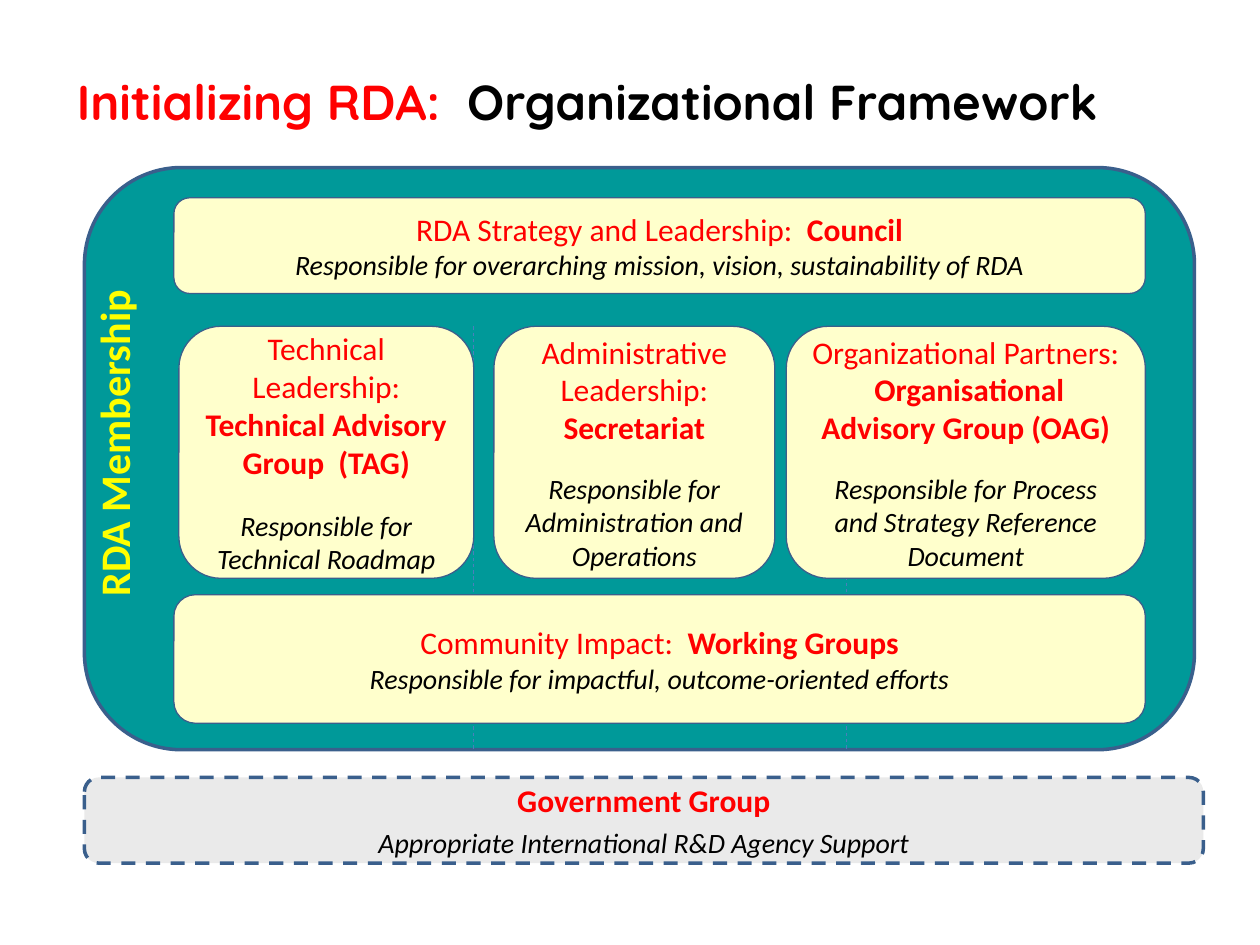
from collections import namedtuple

from lxml import etree
from pptx import Presentation, util as u
from pptx.dml.color import RGBColor
from pptx.enum import dml, shapes, text
from pptx.oxml.ns import qn

# Slide grid: 100 columns by 75 rows of square cells
COLUMNS, ROWS = 100, 75
CELL = u.Inches(0.1)
Box = namedtuple("Box", "left top width height")

RED = RGBColor(0xFF, 0x00, 0x00)
BLACK = RGBColor(0x00, 0x00, 0x00)
YELLOW = RGBColor(0xFF, 0xFF, 0x00)
CREAM = RGBColor(0xFF, 0xFF, 0xCC)
TEAL = RGBColor(0x00, 0x99, 0x99)
GREY = RGBColor(0xEA, 0xEA, 0xEA)
NAVY = RGBColor(0x3A, 0x5F, 0x8C)
BLUE = RGBColor(0x4B, 0x7E, 0xBC)


def cells(*counts):
    return [round(count * CELL) for count in counts]


def inside(box, left, top, width, height):
    """Box whose offsets are counted in cells from the corner of another."""
    return Box(box.left + left, box.top + top, width, height)


def format_run(run, size, color, bold=False, italic=False, font="Calibri"):
    run.font.name, run.font.size = font, u.Pt(size)
    run.font.bold, run.font.italic = bold, italic
    run.font.color.rgb = color


def add_panel(slide, box, fill, line_width):
    panel = slide.shapes.add_shape(
        shapes.MSO_SHAPE.ROUNDED_RECTANGLE, *cells(*box))
    panel.shadow.inherit = False
    panel.fill.solid()
    panel.fill.fore_color.rgb = fill
    panel.line.color.rgb = NAVY
    panel.line.width = u.Pt(line_width)
    return panel


def add_card(slide, box, role, body, duty, gap=0, fill=CREAM, line_width=0.75):
    """Rounded card: red role, bold body name, and duty in italics.

    A role ending in a space or line break shares a paragraph with the name.
    """
    card = add_panel(slide, box, fill, line_width)
    frame = card.text_frame
    frame.word_wrap = True
    frame.vertical_anchor = text.MSO_ANCHOR.MIDDLE
    separate = role and role[-1] not in " \v"
    frame.text = "\n".join([role, body, duty] if separate
                           else [role + body, duty])
    for paragraph in frame.paragraphs:
        paragraph.alignment = text.PP_ALIGN.CENTER
    *headings, last = frame.paragraphs
    if separate:
        format_run(headings[0].runs[0], 18, RED)
        format_run(headings[1].runs[0], 18, RED, bold=True)
    else:
        heading = headings[0]
        heading.text = role
        for run in heading.runs:
            format_run(run, 18, RED)
        name = heading.add_run()
        name.text = body
        format_run(name, 18, RED, bold=True)
    last.space_before = u.Pt(gap)
    format_run(last.runs[0], 16, BLACK, italic=True)
    return card


def add_divider(slide, column, top, bottom):
    divider = slide.shapes.add_connector(
        shapes.MSO_CONNECTOR.STRAIGHT, *cells(column, top, column, bottom))
    divider.line.color.rgb = BLUE
    divider.line.width = u.Pt(0.5)
    divider.line.dash_style = dml.MSO_LINE.DASH
    etree.SubElement(divider._element.spPr, qn("a:effectLst"))


def add_title(slide, box):
    title = slide.shapes.title
    title.left, title.top, title.width, title.height = cells(*box)
    frame = title.text_frame
    frame.vertical_anchor = text.MSO_ANCHOR.MIDDLE
    paragraph = frame.paragraphs[0]
    paragraph.alignment = text.PP_ALIGN.LEFT
    for words, color in (("Initializing RDA:  ", RED),
                         ("Organizational Framework", BLACK)):
        run = paragraph.add_run()
        run.text = words
        format_run(run, 28, color, bold=True, font="Quicksand")


def add_side_label(slide, box):
    """Label that reads upwards along the left edge of the box."""
    width, height = 26.6, 5
    center_x, center_y = box.left + 2.3, box.top + 21.7
    label = slide.shapes.add_textbox(*cells(
        center_x - width / 2, center_y - height / 2, width, height))
    label.rotation = 270
    label.text_frame.word_wrap = False
    label.text_frame.text = "RDA Membership"
    format_run(label.text_frame.paragraphs[0].runs[0], 24, YELLOW, bold=True)


def add_membership(slide, box):
    add_panel(slide, box, TEAL, 2)
    middle_top, middle_height = 12.6, 20
    for column in (37.6, 67.2):
        add_divider(slide, column, box.top + middle_top, box.top + box.height)

    # Full-width cards above and below the leadership row
    add_card(slide, inside(box, 7.1, 2.4, 77.1, 7.6),
             "RDA Strategy and Leadership:  ", "Council",
             "Responsible for overarching mission, vision, "
             "sustainability of RDA")
    add_card(slide, inside(box, 7.1, 33.9, 77.1, 10.2),
             "Community Impact:  ", "Working Groups",
             "Responsible for impactful, outcome-oriented efforts")

    # Leadership row
    leadership = (
        (7.5, 23.4, "Technical Leadership:", "Technical Advisory Group  (TAG)",
         "Responsible for Technical Roadmap", 16),
        (32.5, 22.3, "Administrative Leadership:\v", "Secretariat",
         "Responsible for Administration and Operations", 14.5),
        (55.7, 28.5, "Organizational Partners:  ",
         "Organisational Advisory Group (OAG)",
         "Responsible for Process and Strategy Reference Document", 14.5),
    )
    for left, width, role, body, duty, gap in leadership:
        add_card(slide, inside(box, left, middle_top, width, middle_height),
                 role, body, duty, gap)
    add_side_label(slide, box)


def add_government(slide, box):
    card = add_card(slide, box, "", "Government Group",
                    "Appropriate International R&D Agency Support",
                    gap=4, fill=GREY, line_width=2)
    card.line.dash_style = dml.MSO_LINE.DASH


def main():
    presentation = Presentation()
    presentation.slide_width = COLUMNS * CELL
    presentation.slide_height = ROWS * CELL
    slide = presentation.slides.add_slide(presentation.slide_layouts[5])
    add_title(slide, Box(5.1, 3, 87.4, 10.1))
    add_membership(slide, Box(6.7, 13.3, 88.1, 46.2))
    add_government(slide, Box(6.7, 61.7, 88.8, 6.8))
    presentation.save("out.pptx")


if __name__ == "__main__":
    main()
